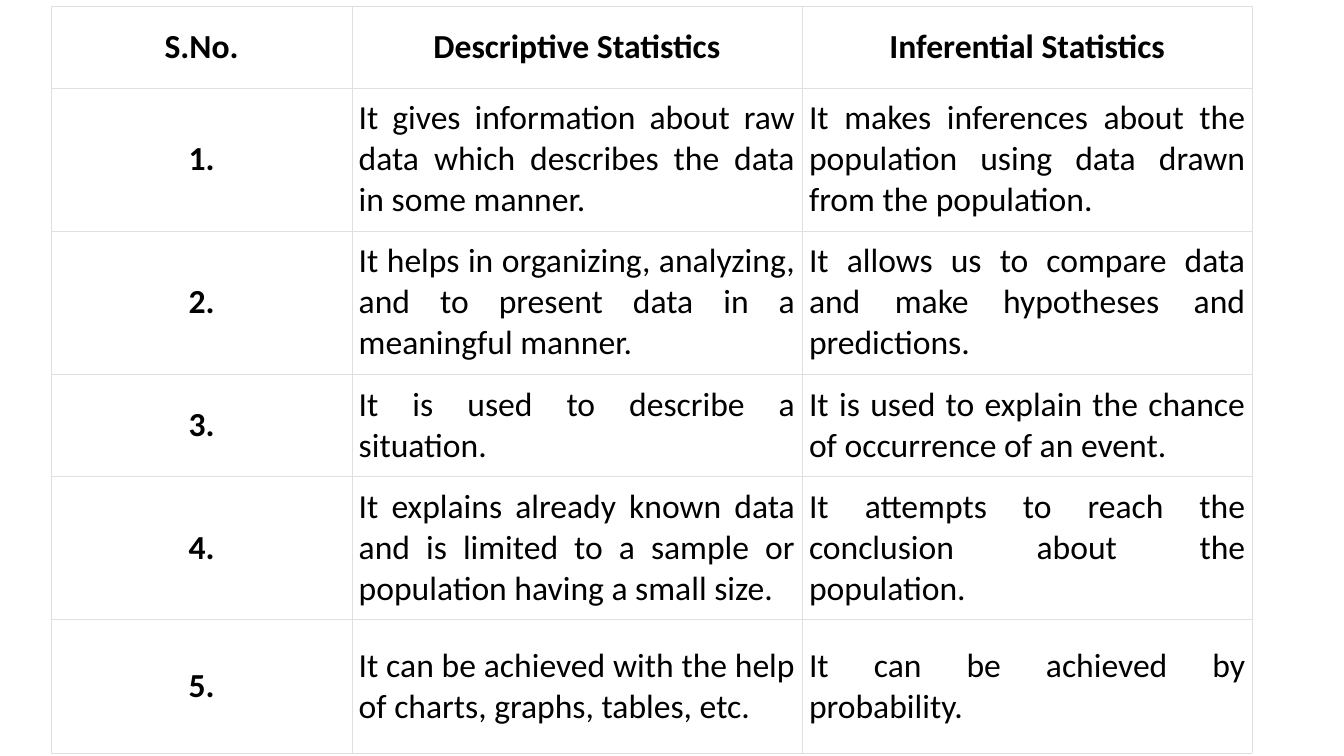
from lxml.etree import SubElement
from pptx import Presentation
from pptx.dml.color import RGBColor
from pptx.enum.text import MSO_ANCHOR as Anchor, PP_ALIGN as Align
from pptx.oxml.ns import qn
from pptx.util import Inches, Pt

BLACK = RGBColor(0x00, 0x00, 0x00)
WHITE = RGBColor(0xFF, 0xFF, 0xFF)
RULE = RGBColor(0xDF, 0xDF, 0xDF)

HEADINGS = ("S.No.", "Descriptive Statistics", "Inferential Statistics")
COMPARISONS = (
    ("It gives information about raw data which describes the data in some manner.",
     "It makes inferences about the population using data drawn from the population."),
    ("It helps in organizing, analyzing, and to present data in a meaningful manner.",
     "It allows us to compare data and make hypotheses and predictions."),
    ("It is used to describe a situation.",
     "It is used to explain the chance of occurrence of an event."),
    ("It explains already known data and is limited to a sample or population having a small size.",
     "It attempts to reach the conclusion about the population."),
    ("It can be achieved with the help of charts, graphs, tables, etc.",
     "It can be achieved by probability."),
)
COLUMN_SHARES = (2, 3, 3)
HEADER_ROW, TALL_ROW, SHORT_ROW = 10.8, 17.73, 11.73
ROW_HEIGHTS = (HEADER_ROW, TALL_ROW, TALL_ROW, SHORT_ROW, TALL_ROW, TALL_ROW)


def write(tf, text, *, font="Calibri", size=24, color=BLACK, bold=False, align=Align.CENTER):
    """Write one formatted paragraph into a text frame."""
    p = tf.paragraphs[0]
    p.alignment = align
    r = p.add_run()
    r.text = text
    r.font.name, r.font.size, r.font.bold = font, Pt(size), bold
    r.font.color.rgb = color


class Deck:
    """Hold the style and current slide, measured in percent of its size."""

    def __init__(self, width, height):
        self.prs = Presentation()
        self.prs.slide_width, self.prs.slide_height = Inches(width), Inches(height)
        self.s = self.prs.slides.add_slide(self.prs.slide_layouts[6])

    def x(self, percent):
        return round(self.prs.slide_width * percent / 100)

    def y(self, percent):
        return round(self.prs.slide_height * percent / 100)

    def table(self, left, top, width, shares, heights):
        frame = self.s.shapes.add_table(len(heights), len(shares), self.x(left), self.y(top),
                                        self.x(width), self.y(sum(heights)))
        table = frame.table
        table.first_row = table.horz_banding = False
        for column, share in zip(table.columns, shares):
            column.width = self.x(width * share / sum(shares))
        for row, height in zip(table.rows, heights):
            row.height = self.y(height)
        return table

    def cell(self, cell, text, inset_x, inset_y, **style):
        cell.margin_left = cell.margin_right = Inches(inset_x)
        cell.margin_top = cell.margin_bottom = Inches(inset_y)
        cell.vertical_anchor = Anchor.MIDDLE
        self.borders(cell)
        cell.fill.solid()
        cell.fill.fore_color.rgb = WHITE
        write(cell.text_frame, text, **style)

    def borders(self, cell, color=RULE, width=0.15):
        props = cell._tc.get_or_add_tcPr()
        for side in ("L", "R", "T", "B"):
            line = SubElement(props, qn(f"a:ln{side}"), w=str(Pt(width)))
            fill = SubElement(line, qn("a:solidFill"))
            SubElement(fill, qn("a:srgbClr"), val=str(color))


def main():
    deck = Deck(13.33, 7.5)
    table = deck.table(3.83, 0.8, 89.35, COLUMN_SHARES, ROW_HEIGHTS)
    for j, heading in enumerate(HEADINGS):
        deck.cell(table.cell(0, j), heading, 0.07 if j else 0.04, 0.07, bold=True)
    for i, points in enumerate(COMPARISONS, 1):
        deck.cell(table.cell(i, 0), f"{i}.", 0.04, 0.04, bold=True)
        for j, point in enumerate(points, 1):
            deck.cell(table.cell(i, j), point, 0.07, 0.1, align=Align.JUSTIFY)
    deck.prs.save("out.pptx")


if __name__ == "__main__":
    main()
